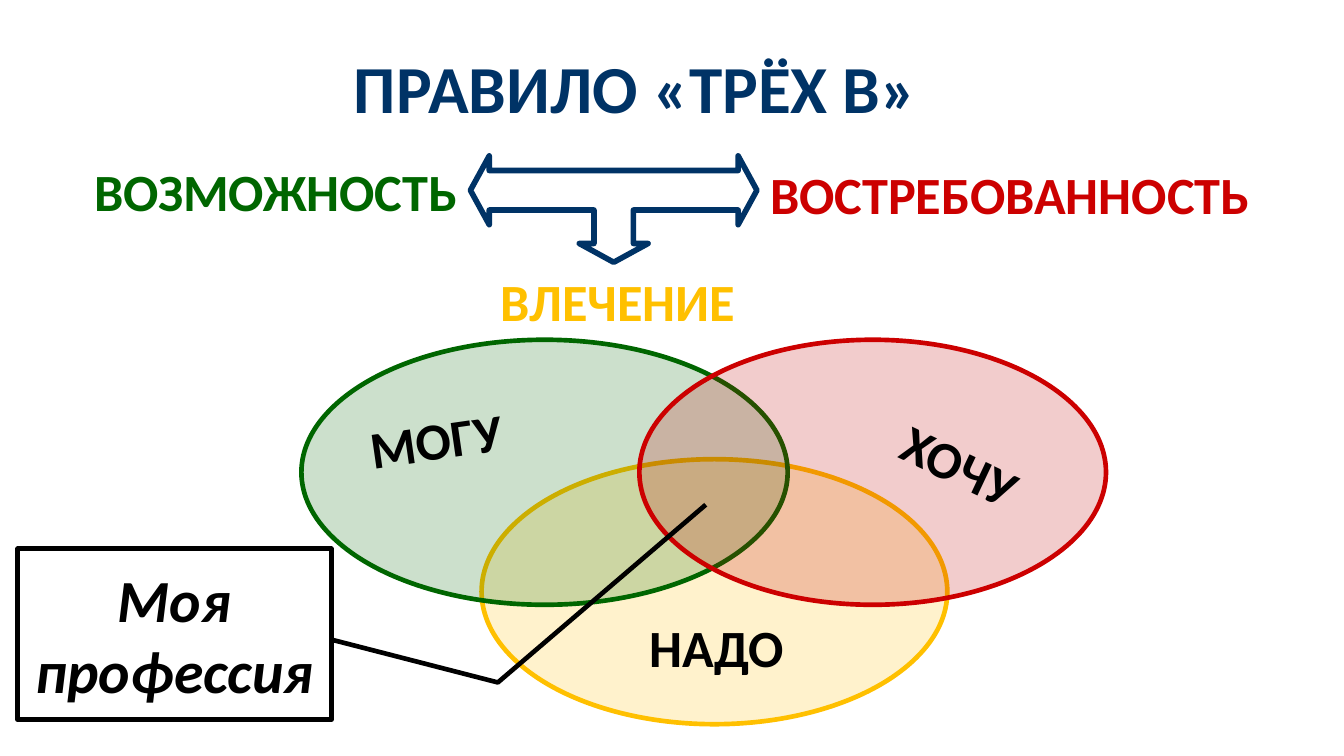
from lxml import etree
from pptx import Presentation
from pptx import util as u
from pptx.dml.color import RGBColor
from pptx.enum import shapes, text
from pptx.oxml.ns import qn

NAVY = RGBColor(0x00, 0x33, 0x66)
GREEN = RGBColor(0x00, 0x66, 0x00)
RED = RGBColor(0xCC, 0x00, 0x00)
DARK_RED = RGBColor(0xC0, 0x00, 0x00)
AMBER = RGBColor(0xFF, 0xC0, 0x00)
BLACK = RGBColor(0x00, 0x00, 0x00)

LEFT, CENTER, RIGHT = text.PP_ALIGN.LEFT, text.PP_ALIGN.CENTER, text.PP_ALIGN.RIGHT
LABEL_HEIGHT = 41
OVAL_HEIGHT = 142


class SlideBuilder:
    """Holds the text style and the slide being built."""

    font_name = "Calibri"
    label_size = 28

    def __init__(self, page):
        self.page = page

    def set_text(self, box, words, color, size, align, italic=False):
        frame = box.text_frame
        frame.text = words
        frame.word_wrap = True
        para = frame.paragraphs[0]
        para.alignment = align
        font = para.font
        font.name, font.size = self.font_name, u.Pt(size)
        font.bold, font.italic = True, italic
        font.color.rgb = color

    def title(self, words, left, top, width, height):
        box = self.page.shapes.title
        box.left, box.top = u.Pt(left), u.Pt(top)
        box.width, box.height = u.Pt(width), u.Pt(height)
        self.set_text(box, words, NAVY, 36, CENTER)

    def label(self, words, color, left, top, width, align, rotation=0, group=None):
        box = (group or self.page).shapes.add_textbox(
            u.Pt(left), u.Pt(top), u.Pt(width), u.Pt(LABEL_HEIGHT))
        box.rotation = rotation
        self.set_text(box, words, color, self.label_size, align)
        box.text_frame.auto_size = text.MSO_AUTO_SIZE.SHAPE_TO_FIT_TEXT

    def outline(self, kind, color, weight, left, top, width, height,
                adjustments=(), group=None):
        shape = (group or self.page).shapes.add_shape(
            kind, u.Pt(left), u.Pt(top), u.Pt(width), u.Pt(height))
        shape.shadow.inherit = False
        shape.fill.background()
        shape.line.color.rgb = color
        shape.line.width = u.Pt(weight)
        for index, value in enumerate(adjustments):
            shape.adjustments[index] = value
        return shape

    def oval(self, fill, line, left, top, width, group=None):
        shape = self.outline(shapes.MSO_SHAPE.OVAL, line, 2.5,
                             left, top, width, OVAL_HEIGHT, group=group)
        shape.fill.solid()
        shape.fill.fore_color.rgb = fill
        # 20 % opacity lets the overlaps show
        color = shape._element.spPr.find(qn("a:solidFill"))[0]
        etree.SubElement(color, qn("a:alpha")).set("val", "20000")

    def group(self):
        return self.page.shapes.add_group_shape()


def main():
    deck = Presentation()
    deck.slide_width, deck.slide_height = u.Pt(720), u.Pt(405)
    page = deck.slides.add_slide(deck.slide_layouts[5])
    builder = SlideBuilder(page)

    # Heading and the three terms around the arrow
    builder.title("ПРАВИЛО «ТРЁХ В»", 94, 21, 493, 51)
    arrow = builder.outline(shapes.MSO_SHAPE.LEFT_RIGHT_UP_ARROW, NAVY, 3,
                            252, 83.5, 153.5, 57, (0.371, 0.323, 0.177))
    arrow.rotation = 180
    builder.label("ВОЗМОЖНОСТЬ", GREEN, 31, 82, 221, RIGHT)
    builder.label("ВОСТРЕБОВАННОСТЬ", RED, 405.5, 83.5, 284, LEFT)
    builder.label("ВЛЕЧЕНИЕ", AMBER, 220.5, 140.5, 221, CENTER)

    # Three overlapping ovals
    builder.oval(AMBER, AMBER, 258, 246, 249.5)
    can = builder.group()
    builder.oval(GREEN, GREEN, 161.5, 182, 260.5, can)
    builder.label("МОГУ", BLACK, 191, 211.5, 133, LEFT, 351.8, can)
    builder.label("НАДО", BLACK, 317.5, 326, 133, CENTER)
    want = builder.group()
    builder.oval(DARK_RED, RED, 342.5, 182, 250, want)
    builder.label("ХОЧУ", BLACK, 445.5, 222, 110, RIGHT, 25.2, want)

    # Callout pointing at the common area
    callout = builder.outline(shapes.MSO_SHAPE.LINE_CALLOUT_2, BLACK, 2.5,
                              9.5, 294, 168, 91.5,
                              (0.531, 0.998, 0.783, 1.531, -0.258, 2.194))
    builder.set_text(callout, "Моя профессия", BLACK, 32, CENTER, italic=True)
    callout.text_frame.vertical_anchor = text.MSO_ANCHOR.MIDDLE

    deck.save("out.pptx")


if __name__ == "__main__":
    main()
